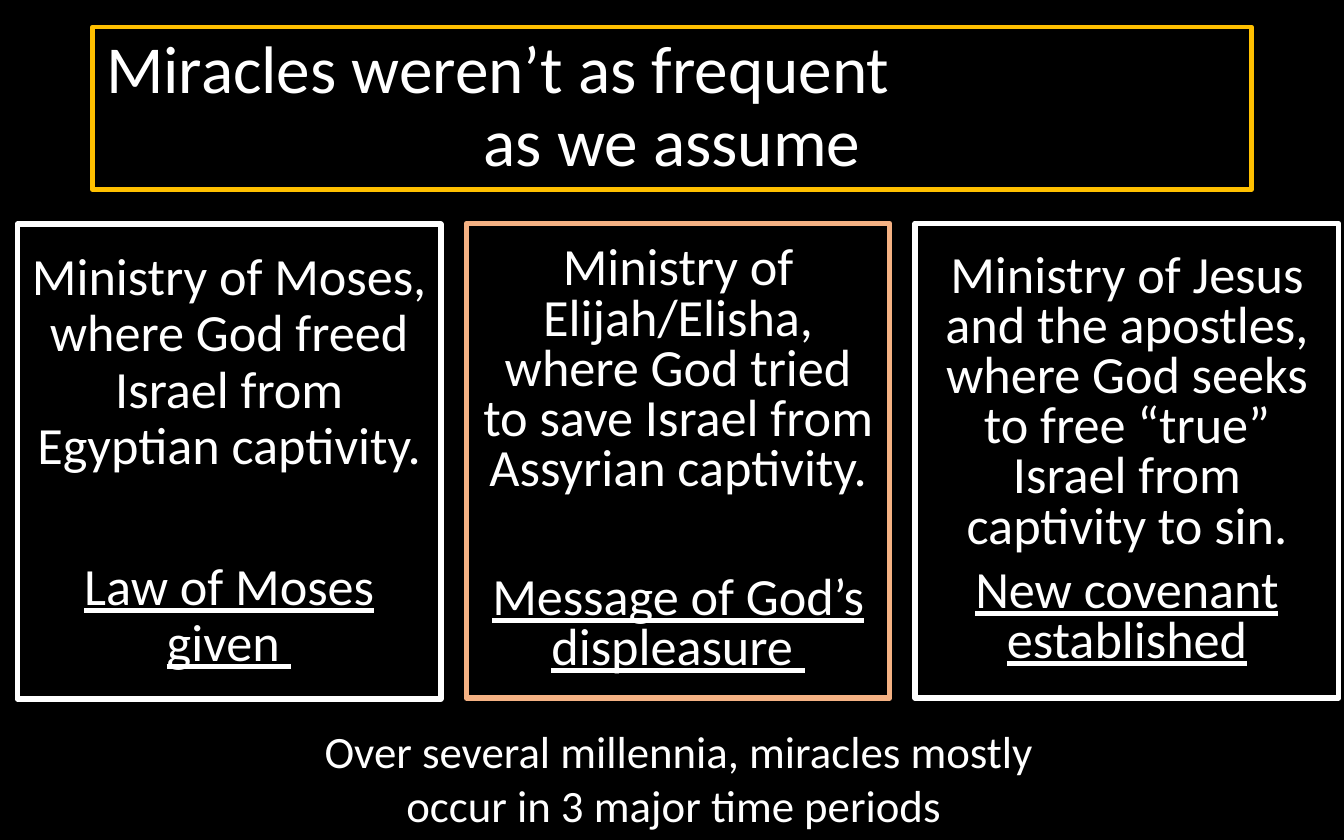
from pptx import Presentation
from pptx.dml.color import RGBColor
from pptx.enum.shapes import MSO_SHAPE
from pptx.enum.text import MSO_ANCHOR, MSO_AUTO_SIZE, PP_ALIGN
from pptx.oxml.xmlchemy import OxmlElement
from pptx.util import Inches, Pt

RECT = MSO_SHAPE.RECTANGLE
MIDDLE, TOP = MSO_ANCHOR.MIDDLE, MSO_ANCHOR.TOP
LEFT, CENTER = PP_ALIGN.LEFT, PP_ALIGN.CENTER
FIXED = MSO_AUTO_SIZE.NONE

BLACK = RGBColor(0x00, 0x00, 0x00)
WHITE = RGBColor(0xFF, 0xFF, 0xFF)
GOLD = RGBColor(0xFF, 0xC0, 0x00)
PEACH = RGBColor(0xF4, 0xB1, 0x83)

# Era columns: line colour, top, line spacing, gap before the outcome, texts
ERAS = [
    (WHITE, 26.7, 0.9, 45,
     "Ministry of Moses, where God freed Israel from Egyptian captivity.",
     "Law of Moses given "),
    (PEACH, 26.6, 0.8, 42,
     "Ministry of Elijah/Elisha, where God tried to save Israel from "
     "Assyrian captivity.",
     "Message of God’s displeasure "),
    (WHITE, 26.6, 0.8, 7.5,
     "Ministry of Jesus and the apostles, where God seeks to free “true” "
     "Israel from captivity to sin.",
     "New covenant established"),
]


class Deck:
    """Holds the style and the current slide; places are in percent of it."""
    font = "Calibri"

    def __init__(self, wide, high):
        self.file = Presentation()
        self.file.slide_width = Inches(wide)
        self.file.slide_height = Inches(high)
        self.slide = self.file.slides.add_slide(self.file.slide_layouts[1])
        fill = self.slide.background.fill
        fill.solid()
        fill.fore_color.rgb = BLACK

    def area(self, x, y, w, h):
        wide, high = self.file.slide_width, self.file.slide_height
        return [int(part * full / 100) for part, full in
                ((x, wide), (y, high), (w, wide), (h, high))]

    def place(self, shape, area):
        shape.left, shape.top, shape.width, shape.height = self.area(*area)

    def frame(self, shape, color, width):
        shape.fill.background()
        shape.line.color.rgb = color
        shape.line.width = Pt(width)

    def label(self, shape, lines, size, space=1.0, anchor=MIDDLE):
        """Fill shape with lines of (text, alignment, points before, underline)."""
        text = shape.text_frame
        text.word_wrap = True
        text.auto_size = FIXED
        text.vertical_anchor = anchor
        text.text = "\n".join(line[0] for line in lines)
        for para, (_, align, before, under) in zip(text.paragraphs, lines):
            para.alignment = align
            para.line_spacing = space
            para.space_before = Pt(before)
            props = para._p.get_or_add_pPr()
            props.set("marL", "0")
            props.set("indent", "0")
            props.append(OxmlElement("a:buNone"))
            for run in para.runs:
                run.font.name = self.font
                run.font.size = Pt(size)
                run.font.color.rgb = WHITE
                run.font.underline = under

    def title(self, lines, area):
        shape = self.slide.shapes.title
        self.place(shape, area)
        self.frame(shape, GOLD, 2.5)
        self.label(shape, lines, 36, 0.9)

    def era(self, index, color, top, space, gap, story, result):
        area = (1.3 + 33.4 * index, top, 31.5, 56.5)
        if index == 0:
            shape = self.slide.placeholders[1]
            self.place(shape, area)
        else:
            shape = self.slide.shapes.add_shape(RECT, *self.area(*area))
            shape.shadow.inherit = False
        self.frame(shape, color, 3)
        lines = [(story, CENTER, 7.5, False), (result, CENTER, gap, True)]
        self.label(shape, lines, 28, space)

    def note(self, words, area):
        shape = self.slide.shapes.add_textbox(*self.area(*area))
        self.label(shape, [(words, CENTER, 0, False)], 24, anchor=TOP)


def main():
    deck = Deck(10, 6.25)
    deck.title([("Miracles weren’t as frequent", LEFT, 0, False),
                ("as we assume", CENTER, 0, False)], (6.9, 3.2, 86.2, 19.4))
    for index, era in enumerate(ERAS):
        deck.era(index, *era)
    deck.note("Over several millennia, miracles mostly occur in 3 major "
              "time periods ", (22.7, 85.4, 55.6, 14.6))
    deck.file.save("out.pptx")


if __name__ == "__main__":
    main()
